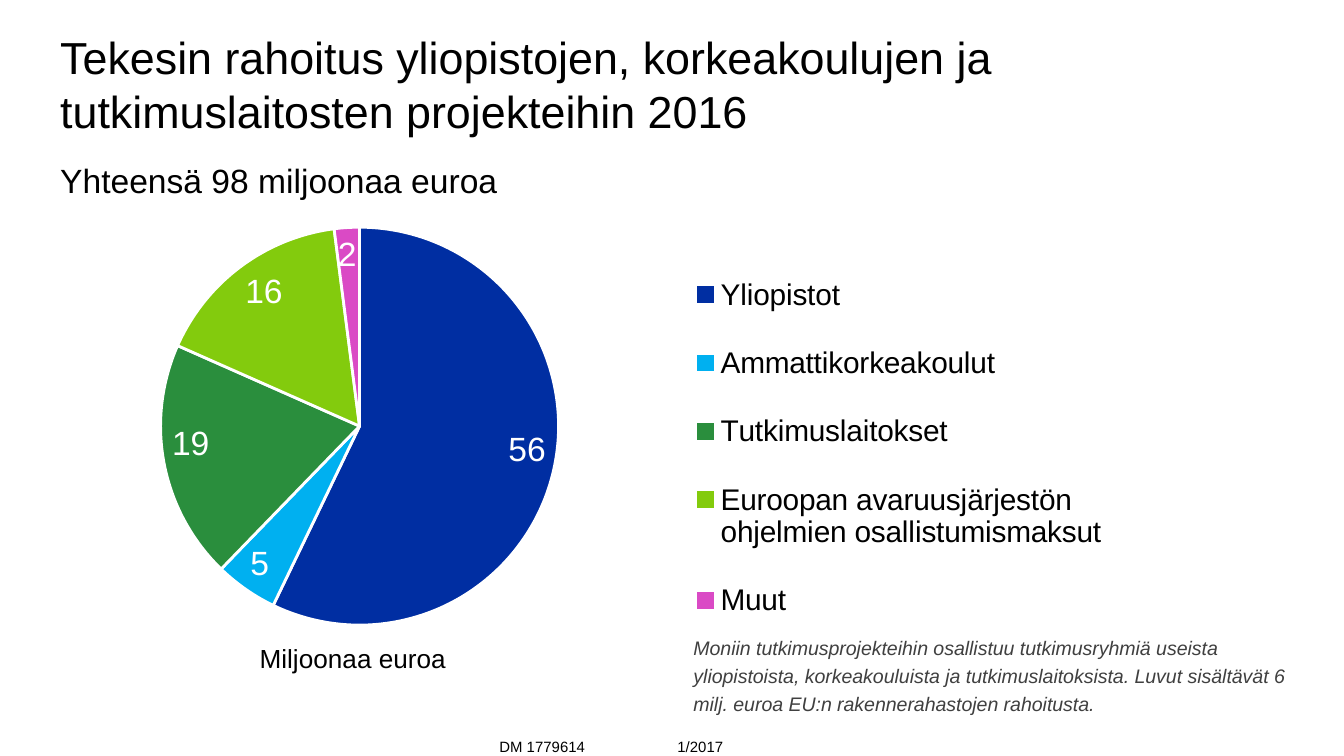
from lxml.etree import SubElement
from pptx import Presentation
from pptx.chart.data import CategoryChartData
from pptx.dml.color import RGBColor
from pptx.enum.chart import XL_CHART_TYPE as ChartType
from pptx.enum.chart import XL_LABEL_POSITION as LabelPosition
from pptx.enum.chart import XL_LEGEND_POSITION as LegendPosition
from pptx.enum.text import MSO_ANCHOR as Anchor
from pptx.enum.text import PP_ALIGN as Align
from pptx.oxml.ns import qn
from pptx.util import Inches, Pt

FONT = "Arial"
FUNDING = [
    ("Yliopistot", 56, "002EA2"),
    ("Ammattikorkeakoulut", 5, "00B0F0"),
    ("Tutkimuslaitokset", 19, "2A8E3D"),
    ("Euroopan avaruusjärjestön\nohjelmien osallistumismaksut", 16, "83CB0D"),
    ("Muut", 2, "DA4AC5"),
]


def color(value):
    """Turn a hex string into a colour."""
    return RGBColor.from_string(value)


def set_font(font, size, tone="000000", italic=False):
    """Apply the typeface, size, colour and slant to a font."""
    formats = {"name": FONT, "size": Pt(size), "bold": False, "italic": italic}
    for name, value in formats.items():
        setattr(font, name, value)
    font.color.rgb = color(tone)


def add_text(page, box, text, size, tone="000000", italic=False, inset=0,
             wrap=True, **formats):
    """Place one paragraph of text in the given box."""
    frame = page.shapes.add_textbox(*map(Inches, box)).text_frame
    frame.word_wrap = wrap
    frame.vertical_anchor = Anchor.TOP
    for side, share in {"left": 1, "right": 1, "top": 0.5, "bottom": 0.5}.items():
        setattr(frame, f"margin_{side}", Inches(inset * share))
    para = frame.paragraphs[0]
    for name, value in formats.items():
        setattr(para, name, value)
    span = para.add_run()
    span.text = text
    set_font(span.font, size, tone, italic)


def set_layout(element, before, percents, inner=False):
    """Fix a chart part at percentages of the chart area."""
    for old in element.findall(qn("c:layout")):
        element.remove(old)
    layout = SubElement(element, qn("c:layout"))
    element.find(qn(before)).addprevious(layout)
    manual = SubElement(layout, qn("c:manualLayout"))
    settings = {"layoutTarget": "inner"} if inner else {}
    settings.update(xMode="edge", yMode="edge")
    settings.update(zip("xywh", (percent / 100 for percent in percents)))
    for name, value in settings.items():
        SubElement(manual, qn(f"c:{name}")).set("val", str(value))


def add_header(page, box):
    """Place the title and the total below it."""
    left, top, width, height = box
    add_text(page, (left, top, width, 0.98),
             "Tekesin rahoitus yliopistojen, korkeakoulujen ja "
             "tutkimuslaitosten projekteihin 2016", 24, inset=0.1)
    add_text(page, (left, top + 0.97, width, height - 0.97),
             "Yhteensä 98 miljoonaa euroa", 18, inset=0.1, space_after=Pt(6))


def add_funding_chart(page, box):
    """Place the pie with its legend and unit caption."""
    left, top, width, height = box
    names, amounts, tones = zip(*FUNDING)
    data = CategoryChartData()
    data.categories = names
    data.add_series("Series 1", amounts)
    chart = page.shapes.add_chart(ChartType.PIE, *map(Inches, box), data).chart
    set_font(chart.font, 18)
    chart.has_title = False
    chart.has_legend = True
    legend = chart.legend
    legend.position = LegendPosition.RIGHT
    legend.include_in_layout = False
    set_font(legend.font, 16)
    set_layout(legend._element, "c:overlay", (55.5, 14.8, 40, 68.2))

    plot = chart.plots[0]
    plot.vary_by_categories = True
    area = plot._element.getparent()
    set_layout(area, "c:pieChart", (8.2, 12.3, 44, 66.1), inner=True)
    series = plot.series[0]
    labels = series.data_labels
    labels.show_value = True
    labels.show_percentage = False
    labels.position = LabelPosition.INSIDE_END
    set_font(labels.font, 18, "FFFFFF")
    for index, tone in enumerate(tones):
        slice_format = series.points[index].format
        slice_format.fill.solid()
        slice_format.fill.fore_color.rgb = color(tone)
        slice_format.line.color.rgb = color("FFFFFF")
        slice_format.line.width = Pt(1.5)
    add_text(page, (left + 1.93, top + 3.64, 1.39, 0.24), "Miljoonaa euroa", 14,
             wrap=False, alignment=Align.CENTER)


def add_note(page, box):
    """Place the explanatory note."""
    add_text(page, box,
             "Moniin tutkimusprojekteihin osallistuu tutkimusryhmiä useista "
             "yliopistoista, korkeakouluista ja tutkimuslaitoksista. Luvut "
             "sisältävät 6 milj. euroa EU:n rakennerahastojen rahoitusta.",
             10.5, "404040", italic=True, line_spacing=Pt(15), space_after=Pt(3))


def add_footer(page, box):
    """Place the document number and the date."""
    left, top, width, height = box
    add_text(page, (left, top, 1.77, height), "DM 1779614", 8, wrap=False,
             alignment=Align.CENTER)
    add_text(page, (left + width - 0.55, top, 0.55, height), "1/2017", 8, wrap=False)


def main():
    """Build the slide and save it."""
    deck = Presentation()
    deck.slide_width = Inches(10)
    deck.slide_height = deck.slide_width * 9 // 16
    page = deck.slides.add_slide(deck.slide_layouts[6])
    add_funding_chart(page, (0, 1.14, 8.86, 4.48))
    add_header(page, (0.35, 0.17, 8.86, 1.31))
    add_note(page, (5.16, 4.7, 4.42, 0.63))
    add_footer(page, (3.15, 5.49, 2.44, 0.16))
    deck.save("out.pptx")


if __name__ == "__main__":
    main()
